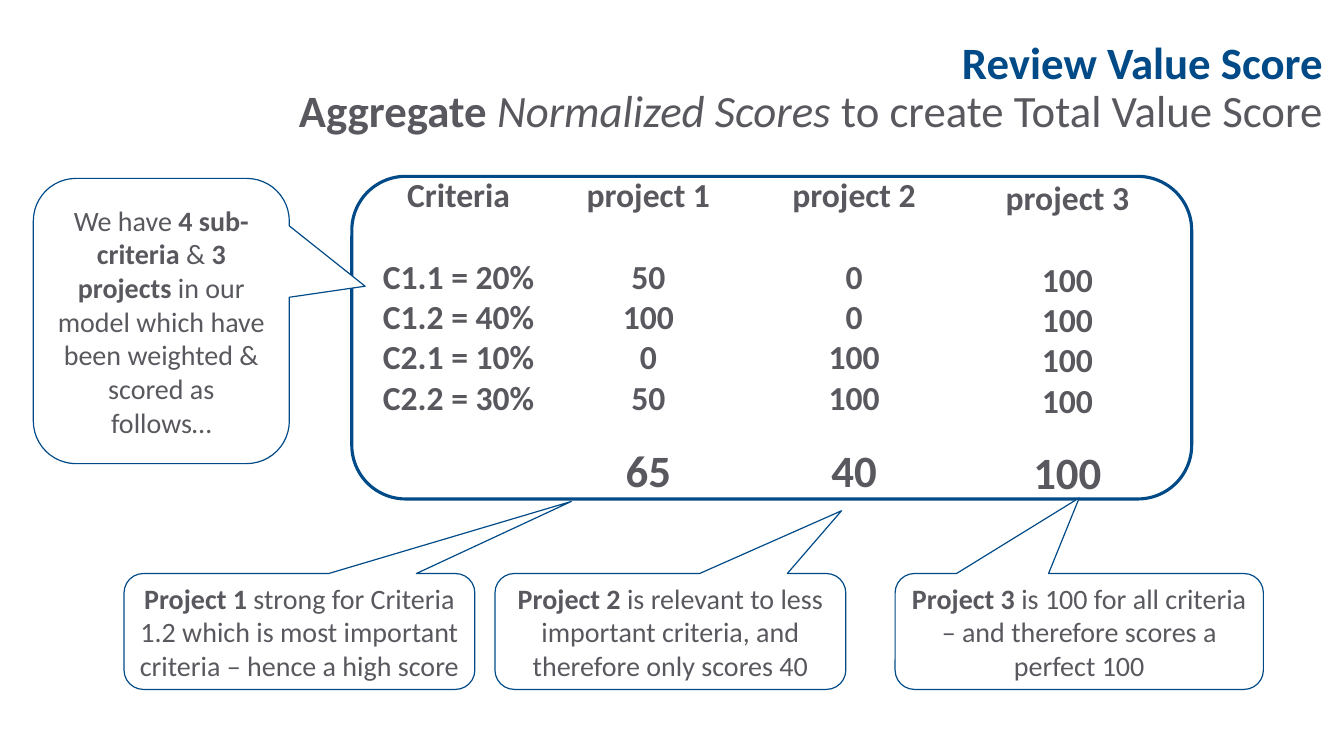
from collections import namedtuple
from dataclasses import dataclass

from pptx import Presentation
from pptx import util as u
from pptx.dml.color import RGBColor
from pptx.enum import shapes, text

Box = namedtuple("Box", "left top width height")


@dataclass(frozen=True)
class Theme:
    """Colours, font, type sizes and line widths of the slide."""
    navy: RGBColor = RGBColor(0x00, 0x4A, 0x87)
    grey: RGBColor = RGBColor(0x59, 0x58, 0x5E)
    white: RGBColor = RGBColor(0xFF, 0xFF, 0xFF)
    font: str = "Calibri"
    heading: int = 32
    scores: int = 24
    note: int = 20
    panel_line: float = 2.25
    note_line: float = 0.85


THEME = Theme()

HEADING = [("Aggregate ", "b"), ("Normalized Scores", "i"),
           (" to create Total Value Score", "")]

COLUMNS = [
    (12.7, -2.2, 21.5, "Criteria",
     ["C1.1 = 20%", "C1.2 = 40%", "C2.1 = 10%", "C2.2 = 30%"], None),
    (35.3, -2.2, 17.3, "project 1", ["50", "100", "0", "50"], "65"),
    (59.8, -2.2, 17.3, "project 2", ["0", "0", "100", "100"], "40"),
    (85.2, -1.3, 17.3, "project 3", ["100"] * 4, "100"),
]

NOTES = [
    (Box(2.48, 23.6, 19.05, 37.73), (0.796, -0.122),
     [("We have ", ""), ("4 sub-criteria ", "b"), ("& ", ""), ("3 projects ", "b"),
      ("in our model which have been weighted & scored as follows…", "")]),
    (Box(9.23, 75.87, 26.1, 15.33), (0.775, -1.122),
     [("Project 1 ", "b"),
      ("strong for Criteria 1.2 which is most important criteria – hence a high score", "")]),
    (Box(36.83, 75.87, 26.1, 15.33), (0.488, -1.042),
     [("Project 2 ", "b"),
      ("is relevant to less important criteria, and therefore only scores 40", "")]),
    (Box(66.6, 75.87, 27.4, 15.33), (0, -1.153),
     [("Project 3 ", "b"),
      ("is 100 for all criteria – and therefore scores a perfect 100", "")]),
]


def part(box, share):
    """Return the box that takes the given percentages of another box."""
    return Box(int(box.left + box.width * share.left / 100),
               int(box.top + box.height * share.top / 100),
               int(box.width * share.width / 100),
               int(box.height * share.height / 100))


def style(paragraph, size, color=THEME.grey, align=text.PP_ALIGN.CENTER, bold=None):
    """Set the alignment and the font of a paragraph."""
    paragraph.alignment = align
    font = paragraph.font
    font.name, font.size, font.bold = THEME.font, u.Pt(size), bold
    font.color.rgb = color


def add_runs(paragraph, pieces):
    """Fill a paragraph with runs marked b for bold or i for italic."""
    for words, mark in pieces:
        run = paragraph.add_run()
        run.text = words
        if mark:
            run.font.bold, run.font.italic = mark == "b", mark == "i"


def add_outline(slide, kind, box, line_width):
    """Add a navy outlined shape without shadow."""
    outline = slide.shapes.add_shape(kind, *box)
    outline.shadow.inherit = False
    outline.line.color.rgb = THEME.navy
    outline.line.width = u.Pt(line_width)
    return outline


def add_heading(slide, box):
    """Add the two right-aligned heading lines."""
    frame = slide.shapes.add_textbox(*box).text_frame
    frame.word_wrap = True
    frame.vertical_anchor = text.MSO_ANCHOR.MIDDLE
    topic, message = frame.paragraphs[0], frame.add_paragraph()
    add_runs(topic, [("Review Value Score", "b")])
    add_runs(message, HEADING)
    for line, color in ((topic, THEME.navy), (message, THEME.grey)):
        style(line, THEME.heading, color, text.PP_ALIGN.RIGHT)
        line.line_spacing = 0.9


def add_lines(slide, box, lines, size):
    """Add centred bold lines, with an empty row's gap after the first."""
    frame = slide.shapes.add_textbox(*box).text_frame
    frame.word_wrap = False
    for index, words in enumerate(lines):
        line = frame.add_paragraph() if index else frame.paragraphs[0]
        line.text = words
        style(line, size, bold=True)
        if index == 1:
            line.space_before = u.Pt(size * 1.22)


def add_score_panel(slide, box):
    """Add the rounded panel with its score columns and totals."""
    panel = add_outline(slide, shapes.MSO_SHAPE.ROUNDED_RECTANGLE, box, THEME.panel_line)
    panel.fill.background()
    for center, top, width, header, scores, total in COLUMNS:
        column = Box(center - width / 2, top, width, 78.8)
        add_lines(slide, part(box, column), [header, *scores], THEME.scores)
        if total:
            total_width = 2.6 + 2.7 * len(total)
            total_box = Box(center - total_width / 2, top + 83.1, total_width, 20)
            add_lines(slide, part(box, total_box), [total], THEME.heading)


def add_note(slide, box, tip, pieces):
    """Add a rounded callout whose tip is given in shares of its size."""
    note = add_outline(slide, shapes.MSO_SHAPE.ROUNDED_RECTANGULAR_CALLOUT,
                       box, THEME.note_line)
    note.adjustments[0], note.adjustments[1] = tip
    note.fill.solid()
    note.fill.fore_color.rgb = THEME.white
    frame = note.text_frame
    frame.word_wrap = True
    frame.vertical_anchor = text.MSO_ANCHOR.MIDDLE
    add_runs(frame.paragraphs[0], pieces)
    style(frame.paragraphs[0], THEME.note)


def main():
    """Build the slide and save it."""
    deck = Presentation()
    deck.slide_width, deck.slide_height = u.Inches(13.33), u.Inches(7.5)
    page = Box(0, 0, deck.slide_width, deck.slide_height)
    slide = deck.slides.add_slide(deck.slide_layouts[6])
    add_heading(slide, part(page, Box(0.83, 0, 98.35, 23.6)))
    add_score_panel(slide, part(page, Box(26.18, 23.33, 62.49, 42.67)))
    for share, tip, pieces in NOTES:
        add_note(slide, part(page, share), tip, pieces)
    deck.save("out.pptx")


if __name__ == "__main__":
    main()
